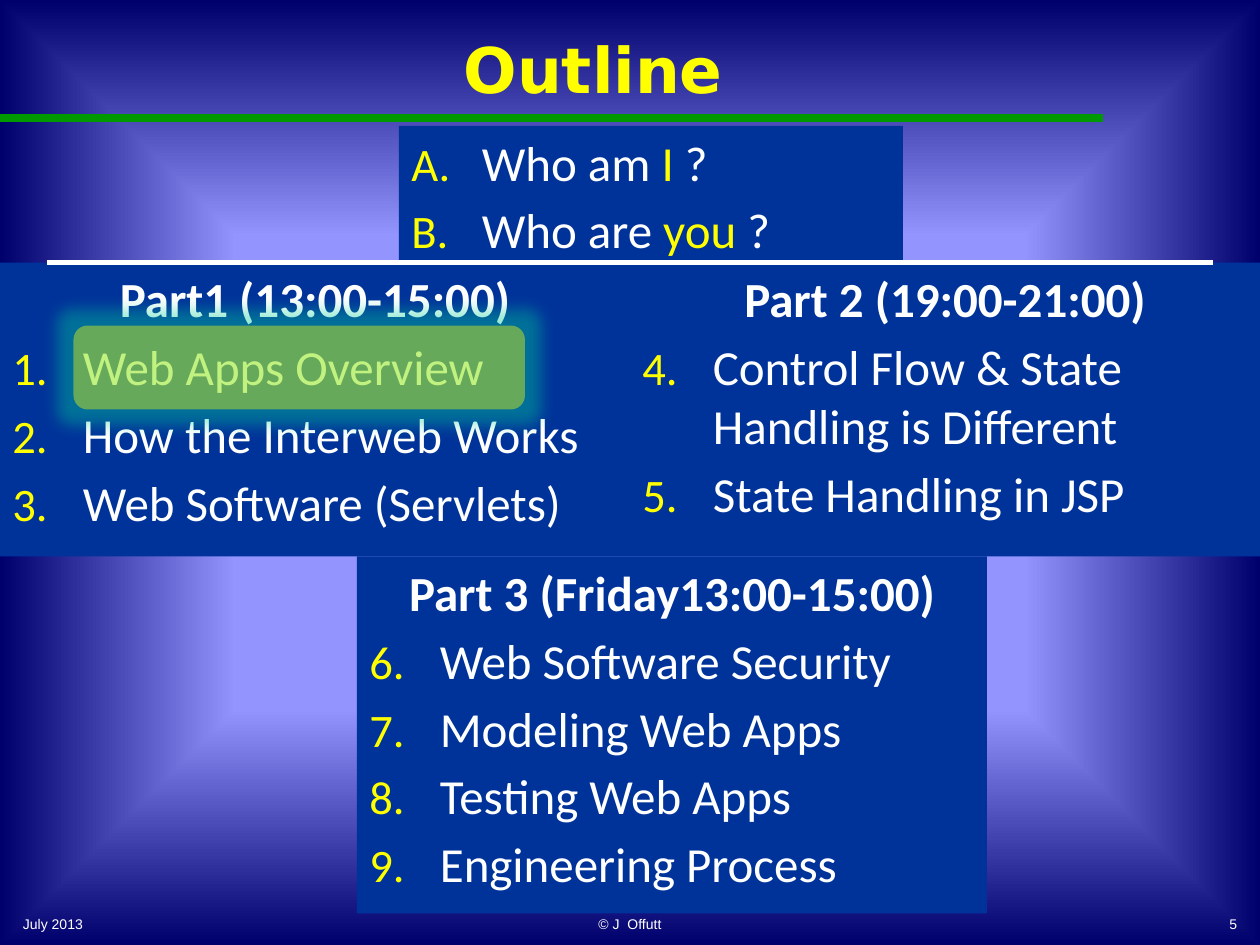
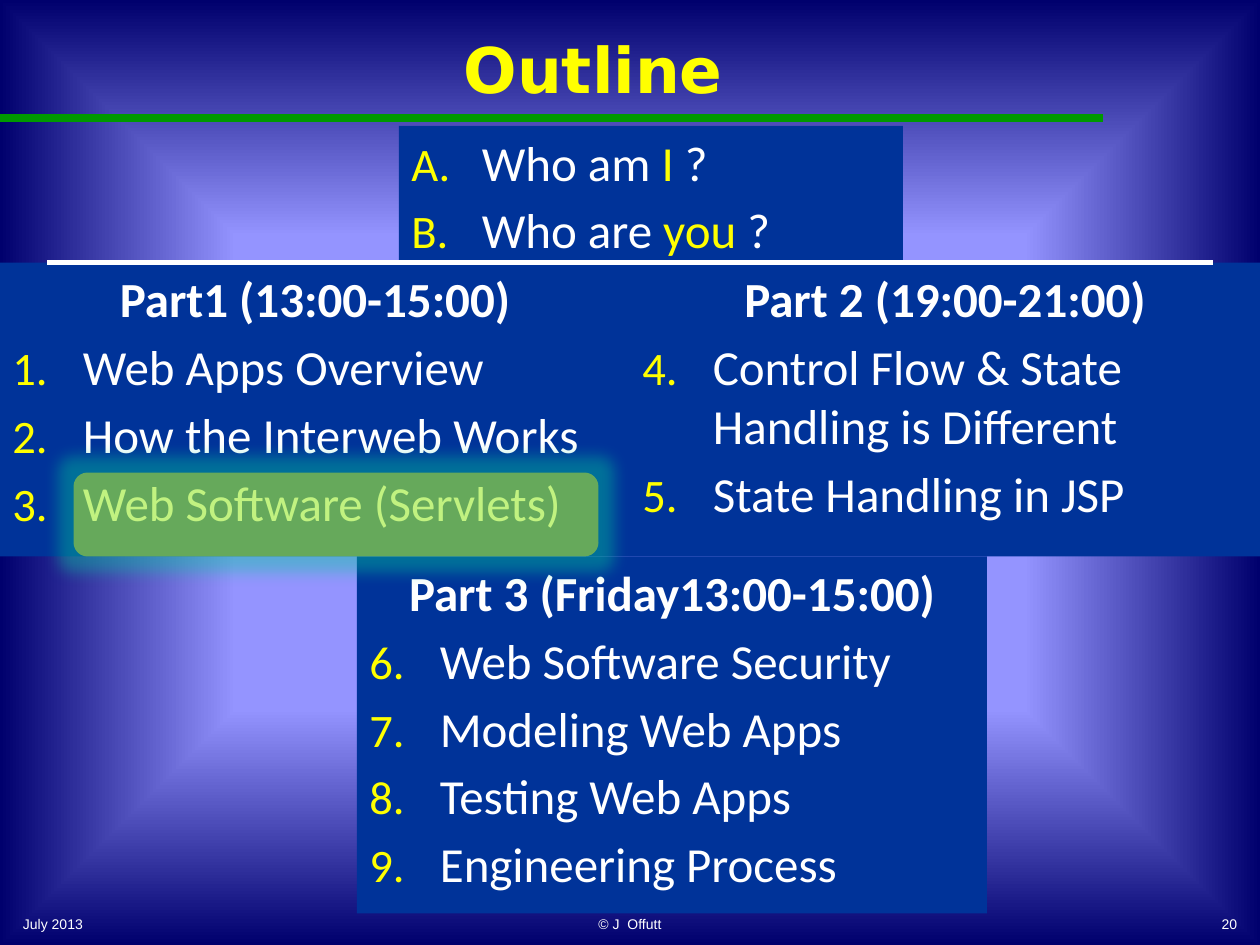
from pptx import Presentation
from pptx.dml.color import RGBColor as RGB
from pptx.enum.shapes import MSO_CONNECTOR as LINK, MSO_SHAPE as SHAPE
from pptx.enum.text import MSO_ANCHOR as ANCHOR, PP_ALIGN as ALIGN
from pptx.oxml import parse_xml
from pptx.oxml.ns import nsdecls, qn
from pptx.util import Inches, Pt
from lxml.etree import SubElement

NAVY = RGB(0x00, 0x33, 0x99)
YELLOW = RGB(0xFF, 0xFF, 0x00)
GREEN = RGB(0x00, 0x99, 0x00)
WHITE = RGB(0xFF, 0xFF, 0xFF)
TEAL = RGB(0x00, 0xCC, 0x99)
LIGHT = RGB(0x94, 0x94, 0xFF)
DARK = RGB(0x00, 0x00, 0x6D)

COLS, ROWS = 120, 90
CELL = Inches(10) // COLS

TITLE = "Outline"
PANELS = [
    ((38, 12, 48, 13), None, "alphaUcPeriod", 1, ["Who am *I* ?", "Who are *you* ?"]),
    ((0, 25, 60, 28), "Part1 (13:00-15:00)", "arabicPeriod", 1,
     ["Web Apps Overview", "How the Interweb Works", "Web Software (Servlets)"]),
    ((60, 25, 60, 28), "Part 2 (19:00-21:00)", "arabicPeriod", 4,
     ["Control Flow & State Handling is Different", "State Handling in JSP"]),
    ((34, 53, 60, 34), "Part 3 (Friday13:00-15:00)", "arabicPeriod", 6,
     ["Web Software Security", "Modeling Web Apps", "Testing Web Apps",
      "Engineering Process"]),
]
RULES = [((0, 11.2), (105, 11.2), GREEN, 4.5), ((4.5, 25), (115.5, 25), WHITE, 3)]
SLIDES = [("5", (7, 31, 43, 8)), ("20", (7, 45, 50, 8))]


def cells(spot):
    return [int(n * CELL) for n in spot]


def style(run, font, size, color, bold=False):
    run.font.name, run.font.size = font, Pt(size)
    run.font.bold, run.font.color.rgb = bold, color


def paint(master):
    master.background.fill.solid()
    old = master.element.find(".//" + qn("p:bgPr")).find(qn("a:solidFill"))
    grad = parse_xml(
        f'<a:gradFill {nsdecls("a")} rotWithShape="0"><a:gsLst>'
        f'<a:gs pos="50000"><a:srgbClr val="{LIGHT}"/></a:gs>'
        f'<a:gs pos="100000"><a:srgbClr val="{DARK}"/></a:gs></a:gsLst>'
        '<a:path path="shape"><a:fillToRect l="50000" t="50000" r="50000" b="50000"/>'
        '</a:path></a:gradFill>')
    old.getparent().replace(old, grad)


def block(slide, kind, spot, color):
    box = slide.shapes.add_shape(kind, *cells(spot))
    box.shadow.inherit = False
    box.fill.solid()
    box.fill.fore_color.rgb = color
    box.line.fill.background()
    return box


def label(slide, spot, text, align, *look):
    box = slide.shapes.add_textbox(*cells(spot))
    frame = box.text_frame
    frame.word_wrap = True
    frame.vertical_anchor = ANCHOR.MIDDLE
    frame.text = text
    para = frame.paragraphs[0]
    para.alignment = align
    style(para.runs[0], *look)


def rule(slide, start, end, color, width):
    line = slide.shapes.add_connector(LINK.STRAIGHT, *cells(start + end))
    line.line.color.rgb = color
    line.line.width = Pt(width)
    SubElement(line.element.spPr, qn("a:effectLst"))


def number(para, scheme, first):
    props = para._p.get_or_add_pPr()
    props.set("marL", str(Inches(0.56)))
    props.set("indent", str(-Inches(0.56)))
    tint = SubElement(props, qn("a:buClr"))
    SubElement(tint, qn("a:srgbClr"), val=str(YELLOW))
    SubElement(props, qn("a:buSzPct"), val="95000")
    SubElement(props, qn("a:buAutoNum"), type=scheme, startAt=str(first))


def panel(slide, spot, head, scheme, first, items):
    frame = block(slide, SHAPE.RECTANGLE, spot, NAVY).text_frame
    frame.word_wrap = True
    frame.vertical_anchor = ANCHOR.TOP
    lines = ([head] if head else []) + items
    for i, text in enumerate(lines):
        para = frame.add_paragraph() if i else frame.paragraphs[0]
        title = text == head
        para.alignment = ALIGN.CENTER if title else ALIGN.LEFT
        if not title:
            number(para, scheme, first)
        if i:
            para.space_before = Pt(5.1)
        for j, part in enumerate(text.split("*")):
            run = para.add_run()
            run.text = part
            style(run, "Calibri", 28, YELLOW if j % 2 else WHITE, title)


def mark(slide, spot):
    box = block(slide, SHAPE.ROUNDED_RECTANGLE, spot, YELLOW)
    props = box.element.spPr
    tint = props.find(qn("a:solidFill")).find(qn("a:srgbClr"))
    SubElement(tint, qn("a:alpha"), val="40000")
    glow = SubElement(props.find(qn("a:effectLst")), qn("a:glow"), rad=str(Pt(18)))
    tint = SubElement(glow, qn("a:srgbClr"), val=str(TEAL))
    SubElement(tint, qn("a:alpha"), val="40000")


def build(deck, page, spot):
    slide = deck.slides.add_slide(deck.slide_layouts[6])
    label(slide, (2, 1, 109, 11), TITLE, ALIGN.CENTER, "DejaVu Sans", 36, YELLOW, True)
    feet = [(1, 25, "July 2013", ALIGN.LEFT), (41, 38, "© J  Offutt", ALIGN.CENTER),
            (94, 25, page, ALIGN.RIGHT)]
    for left, width, text, align in feet:
        label(slide, (left, 86, width, 4), text, align, "Arial", 8, WHITE)
    for item in PANELS:
        panel(slide, *item)
    for item in RULES:
        rule(slide, *item)
    mark(slide, spot)


def main():
    deck = Presentation()
    deck.slide_width, deck.slide_height = COLS * CELL, ROWS * CELL
    paint(deck.slide_master)
    for page, spot in SLIDES:
        build(deck, page, spot)
    deck.save("out.pptx")


if __name__ == "__main__":
    main()
